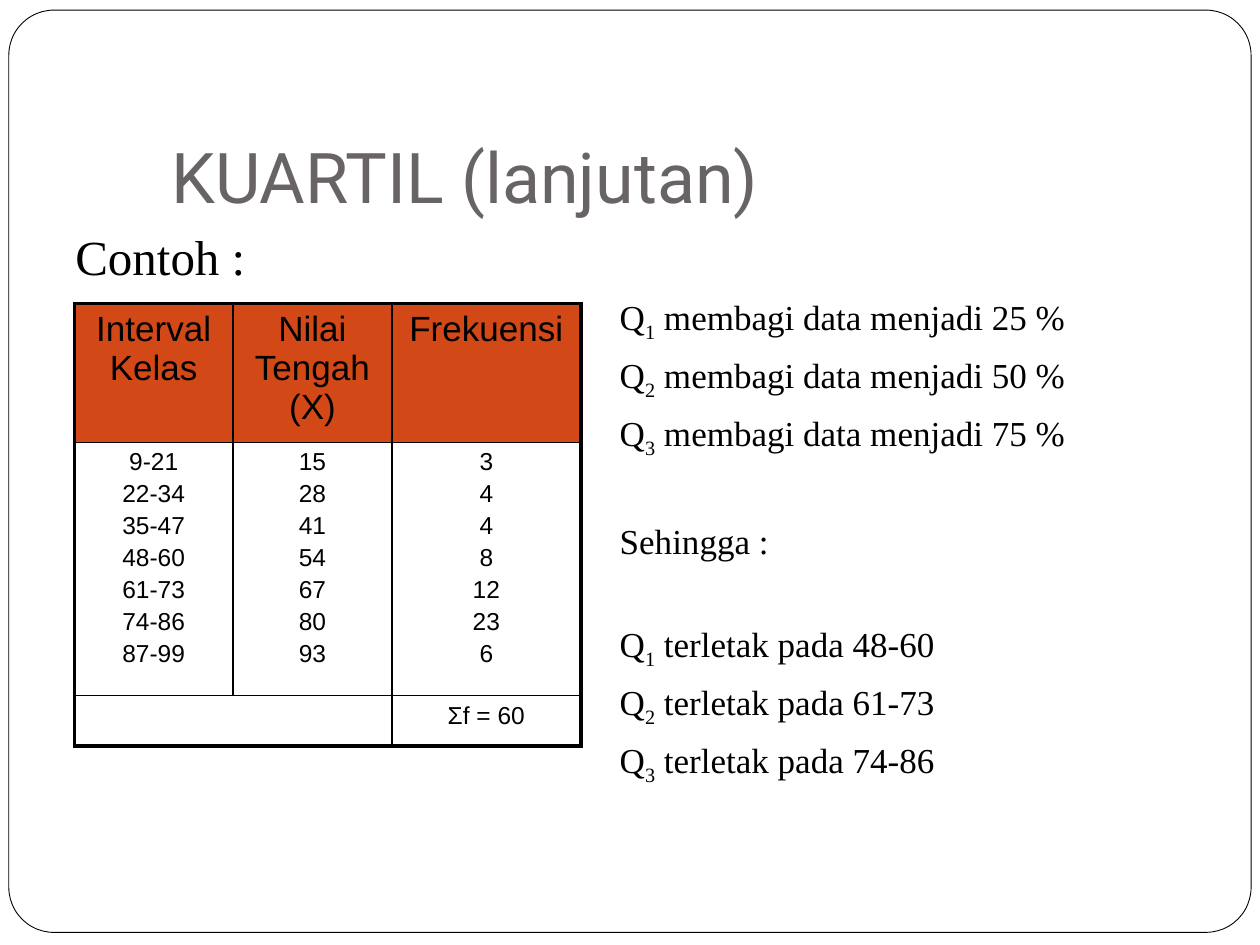
from lxml.etree import SubElement as Sub
from pptx import Presentation
from pptx.dml.color import RGBColor as RGB
from pptx.enum.shapes import MSO_SHAPE as Shape
from pptx.enum.text import MSO_ANCHOR as Anchor, PP_ALIGN as Align
from pptx.oxml.ns import qn
from pptx.util import Inches, Pt

COLOR = {"ink": "000000", "title": "696464", "head": "D34817", "page": "FFFFFF"}
SERIF = "Times New Roman"


def write(frame, text, font=SERIF, size=20, color="ink", align=Align.LEFT,
          gap=0, left=0):
    """Add one paragraph; text between underscores is subscript."""
    para = frame.add_paragraph() if frame.text else frame.paragraphs[0]
    para.alignment = align
    para.space_before = Pt(gap)
    props = para._p.get_or_add_pPr()
    props.set("marL", str(Inches(left)))
    props.set("indent", "0")
    for i, part in enumerate(text.split("_")):
        run = para.add_run()
        run.text = part
        run.font.name = font
        run.font.size = Pt(size)
        run.font.color.rgb = RGB.from_string(COLOR[color])
        if i % 2:
            run.font._element.set("baseline", "-25000")


def edge(cell, side, width):
    """Draw one border of a table cell."""
    line = Sub(cell._tc.get_or_add_tcPr(), qn(f"a:ln{side}"), w=str(Pt(width)))
    fill = Sub(line, qn("a:solidFill"))
    Sub(fill, qn("a:srgbClr"), val=COLOR["ink"])


prs = Presentation()
prs.slide_width, prs.slide_height = Inches(10), Inches(7.5)
slide = prs.slides.add_slide(prs.slide_layouts[5])
shapes = slide.shapes

# Rounded page frame, behind everything
page = shapes.add_shape(Shape.ROUNDED_RECTANGLE, Inches(0.07), Inches(0.08),
                        Inches(9.86), Inches(7.32))
page.adjustments[0] = 0.049
page.shadow.inherit = False
page.fill.solid()
page.fill.fore_color.rgb = RGB.from_string(COLOR["page"])
page.line.color.rgb = RGB.from_string(COLOR["ink"])
page.line.width = Pt(0.5)
shapes._spTree.insert(2, page._element)

# Title
title = shapes.title
title.left, title.top = Inches(1.26), Inches(0.23)
title.width, title.height = Inches(8.52), Inches(1.6)
frame = title.text_frame
frame.vertical_anchor = Anchor.BOTTOM
frame.margin_bottom = Inches(0.1)
write(frame, "KUARTIL (lanjutan)", font="Roboto", size=40, color="title")

# Body: heading, then indented lines
body = shapes.add_textbox(Inches(0.5), Inches(1.75), Inches(9.15), Inches(4.95))
frame = body.text_frame
frame.word_wrap = True
write(frame, "Contoh :", size=28, gap=5.8)
LINES = [
    ("Q_1_ membagi data menjadi 25 %", 5.8),
    ("Q_2_ membagi data menjadi 50 %", 5.8),
    ("Q_3_ membagi data menjadi 75 %", 5.8),
    ("Sehingga :", 34.6),
    ("Q_1_ terletak pada 48-60", 34.6),
    ("Q_2_ terletak pada 61-73", 5.8),
    ("Q_3_ terletak pada 74-86", 5.8),
]
for text, gap in LINES:
    write(frame, text, gap=gap, left=4.32)

# Frequency table
ROWS = [
    [["Interval Kelas"], ["Nilai Tengah (X)"], ["Frekuensi"]],
    [["9-21", "22-34", "35-47", "48-60", "61-73", "74-86", "87-99"],
     ["15", "28", "41", "54", "67", "80", "93"],
     ["3", "4", "4", "8", "12", "23", "6"]],
    [[""], [""], ["Σf = 60"]],
]
table = shapes.add_table(3, 3, Inches(0.59), Inches(2.41),
                         Inches(4.02), Inches(3.44)).table
table.first_row = table.horz_banding = False
for col, width in zip(table.columns, (1.26, 1.26, 1.5)):
    col.width = Inches(width)
for row, height in zip(table.rows, (1.1, 2.01, 0.33)):
    row.height = Inches(height)
for r, row in enumerate(ROWS):
    for c, items in enumerate(row):
        cell = table.cell(r, c)
        for text in items:
            write(cell.text_frame, text, font="Arial", size=14 if r else 20,
                  align=Align.CENTER, gap=2.5 if r else 3.5)
        # Thick outer edges, thin inner ones
        for side, outer in (("L", c == 0), ("R", c == 2),
                            ("T", r == 0), ("B", r == 2)):
            edge(cell, side, 2.25 if outer else 1)
        cell.fill.solid()
        cell.fill.fore_color.rgb = RGB.from_string(COLOR["page" if r else "head"])
table.cell(2, 0).merge(table.cell(2, 1))

prs.save("out.pptx")
